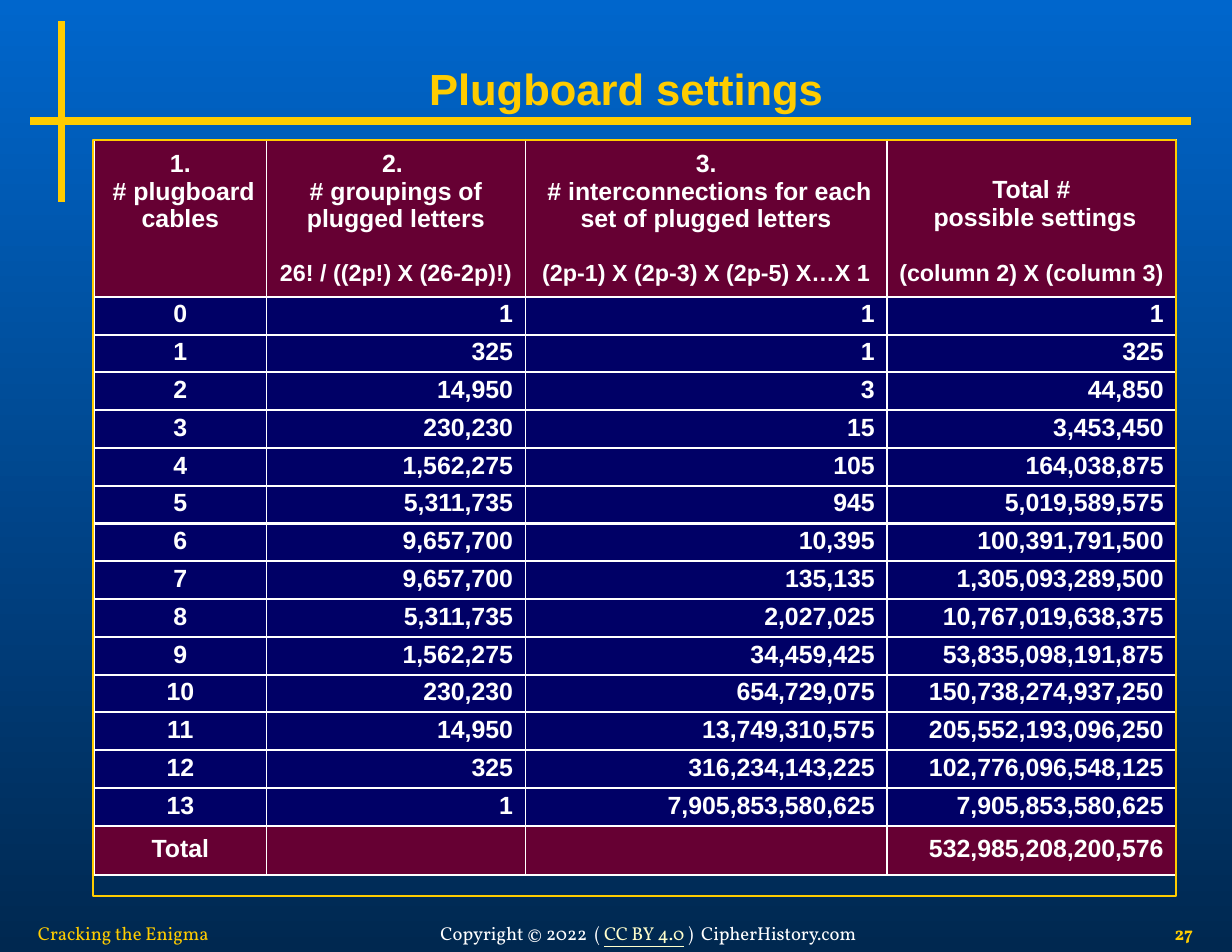
from dataclasses import dataclass

from lxml import etree
from pptx import Presentation
from pptx import util as u
from pptx.dml.color import RGBColor
from pptx.enum import shapes, text
from pptx.oxml.ns import qn

Inches, Pt = u.Inches, u.Pt
ALIGN, ANCHOR = text.PP_ALIGN, text.MSO_ANCHOR


@dataclass(frozen=True)
class Theme:
    gold: str = "FFCC00"
    white: str = "FFFFFF"
    link: str = "FFFFCC"
    maroon: str = "660033"
    navy: str = "000066"
    sky: str = "0066CC"
    night: str = "002850"
    sans: str = "Arial"
    serif: str = "Vollkorn"
    title: float = 28
    body: float = 16
    formula: float = 15
    footer: float = 12


THEME = Theme()
NO_STYLE = "{2D5ABB26-0587-4C30-8999-92F81FD0307C}"
COLUMNS = (1.54, 2.31, 3.23, 2.58)
HEADINGS = (
    ("1.", " # plugboard cables"),
    ("2. ", "# groupings of plugged letters"),
    ("3.", " # interconnections for each set of plugged letters"),
    ("Total #", " possible settings"),
)
FORMULAS = ("", "26! / ((2p!) X (26-2p)!)", "(2p-1) X (2p-3) X (2p-5) X…X 1",
            "(column 2) X (column 3)")
SETTINGS = (
    ("0", "1", "1", "1"),
    ("1", "325", "1", "325"),
    ("2", "14,950", "3", "44,850"),
    ("3", "230,230", "15", "3,453,450"),
    ("4", "1,562,275", "105", "164,038,875"),
    ("5", "5,311,735", "945", "5,019,589,575"),
    ("6", "9,657,700", "10,395", "100,391,791,500"),
    ("7", "9,657,700", "135,135", "1,305,093,289,500"),
    ("8", "5,311,735", "2,027,025", "10,767,019,638,375"),
    ("9", "1,562,275", "34,459,425", "53,835,098,191,875"),
    ("10", "230,230", "654,729,075", "150,738,274,937,250"),
    ("11", "14,950", "13,749,310,575", "205,552,193,096,250"),
    ("12", "325", "316,234,143,225", "102,776,096,548,125"),
    ("13", "1", "7,905,853,580,625", "7,905,853,580,625"),
)
TOTALS = ("Total", "", "", "532,985,208,200,576")


def assign(target, values):
    for name, value in values.items():
        setattr(target, name, value)


def style_font(font, name, size, color, **values):
    assign(font, {"name": name, "size": Pt(size), **values})
    font.color.rgb = RGBColor.from_string(color)


def set_background(slide):
    fill = slide.background.fill
    fill.gradient()
    fill.gradient_angle = 270
    for stop, color, position in zip(fill.gradient_stops, (THEME.sky, THEME.night), (0, 1)):
        stop.color.rgb = RGBColor.from_string(color)
        stop.position = position


def add_title(slide, wording):
    title = slide.shapes.title
    assign(title, {"left": Inches(0.55), "top": Inches(0.5),
                   "width": Inches(10.08), "height": Inches(0.58)})
    frame = title.text_frame
    frame.text = wording
    frame.vertical_anchor = ANCHOR.MIDDLE
    paragraph = frame.paragraphs[0]
    paragraph.alignment = ALIGN.CENTER
    style_font(paragraph.runs[0].font, THEME.sans, THEME.title, THEME.gold, bold=True)


def add_rule(slide, *ends):
    rule = slide.shapes.add_connector(shapes.MSO_CONNECTOR.STRAIGHT, *map(Inches, ends))
    rule.line.width = Pt(5)
    rule.line.color.rgb = RGBColor.from_string(THEME.gold)
    etree.SubElement(rule._element.spPr, qn("a:effectLst"))


def add_footer(slide, left, width, alignment, *runs):
    """Each run is (wording, colour, font values)."""
    box = slide.shapes.add_textbox(Inches(left), Inches(8.18), Inches(width), Inches(0.3))
    frame = box.text_frame
    assign(frame, {"word_wrap": True, "vertical_anchor": ANCHOR.MIDDLE})
    paragraph = frame.paragraphs[0]
    paragraph.alignment = alignment
    for wording, color, values in runs:
        run = paragraph.add_run()
        run.text = wording
        style_font(run.font, THEME.serif, THEME.footer, color, **values)


def add_border(cell, **widths):
    """Draw white cell edges; the keys L, R, T, B must come in that order."""
    properties = cell._tc.get_or_add_tcPr()
    for side, width in widths.items():
        line = etree.SubElement(properties, qn(f"a:ln{side}"), w=str(Pt(width)))
        fill = etree.SubElement(line, qn("a:solidFill"))
        etree.SubElement(fill, qn("a:srgbClr"), val=THEME.white)


def fill_cell(cell, lines, color, edges, insets, anchor=ANCHOR.MIDDLE,
              alignment=ALIGN.CENTER, size=THEME.body, spacing=1.0):
    add_border(cell, L=1, R=1, **edges)
    cell.fill.solid()
    cell.fill.fore_color.rgb = RGBColor.from_string(color)
    cell.vertical_anchor = anchor
    sides = ("margin_left", "margin_top", "margin_right", "margin_bottom")
    assign(cell, dict(zip(sides, map(Inches, insets))))
    cell.text_frame.text = "\n".join(lines)
    for paragraph in cell.text_frame.paragraphs:
        assign(paragraph, {"alignment": alignment, "line_spacing": spacing})
        style_font(paragraph.font, THEME.sans, size, THEME.white, bold=True)
        for run in paragraph.runs:
            style_font(run.font, THEME.sans, size, THEME.white, bold=True)


def add_settings_table(slide):
    row_count = len(SETTINGS) + 3
    frame = slide.shapes.add_table(row_count, len(COLUMNS), Inches(0.84), Inches(1.25),
                                   Inches(sum(COLUMNS)), Inches(6.56))
    table = frame.table
    assign(table, {"first_row": False, "horz_banding": False})
    frame._element.find(".//" + qn("a:tableStyleId")).text = NO_STYLE
    for column, width in zip(table.columns, COLUMNS):
        column.width = Inches(width)
    data_height = Inches(4.72) // len(SETTINGS)
    heights = [Inches(0.92), Inches(0.48), *[data_height] * len(SETTINGS), Inches(0.44)]
    for row, height in zip(table.rows, heights):
        row.height = height

    for column in range(len(COLUMNS)):
        last = column == len(COLUMNS) - 1
        number_alignment = ALIGN.RIGHT if column else ALIGN.CENTER
        fill_cell(table.cell(0, column), HEADINGS[column], THEME.maroon, {"T": 1.5},
                  (0, 0.22 if last else 0, 0, 0))
        fill_cell(table.cell(1, column), [FORMULAS[column]], THEME.maroon, {"B": 1.5},
                  (0, 0.1, 0, 0), size=THEME.formula, spacing=0.8)
        for index, values in enumerate(SETTINGS, 2):
            fill_cell(table.cell(index, column), [values[column]], THEME.navy,
                      {"T": 1.5, "B": 1.5}, (0.11, 0.04, 0.11, 0.06), ANCHOR.BOTTOM,
                      number_alignment, spacing=0.89)
        fill_cell(table.cell(row_count - 1, column), [TOTALS[column]], THEME.maroon,
                  {"T": 1.5, "B": 1.5}, (0.11, 0.06, 0.11, 0.06),
                  alignment=number_alignment, spacing=0.89)


def add_table_frame(slide):
    border = slide.shapes.add_shape(shapes.MSO_SHAPE.RECTANGLE, Inches(0.83), Inches(1.25),
                                    Inches(9.67), Inches(6.75))
    border.shadow.inherit = False
    border.fill.background()
    border.line.width = Pt(1)
    border.line.color.rgb = RGBColor.from_string(THEME.gold)


def main():
    presentation = Presentation()
    assign(presentation, {"slide_width": Inches(11), "slide_height": Inches(8.5)})
    slide = presentation.slides.add_slide(presentation.slide_layouts[5])
    set_background(slide)
    add_rule(slide, 0.27, 1.08, 10.63, 1.08)
    add_rule(slide, 0.55, 0.19, 0.55, 1.8)
    add_title(slide, "Plugboard settings")
    add_footer(slide, 0.24, 2.16, ALIGN.LEFT, ("Cracking the Enigma", THEME.gold, {}))
    add_footer(slide, 9.76, 0.99, ALIGN.RIGHT, ("27", THEME.gold, {"bold": True}))
    add_settings_table(slide)
    add_footer(slide, 3.75, 4.08, ALIGN.CENTER,
               ("Copyright © 2022  ( ", THEME.white, {}),
               ("CC BY 4.0", THEME.link, {"underline": True}),
               (" )  CipherHistory.com", THEME.white, {}))
    add_table_frame(slide)
    presentation.save("out.pptx")


if __name__ == "__main__":
    main()
